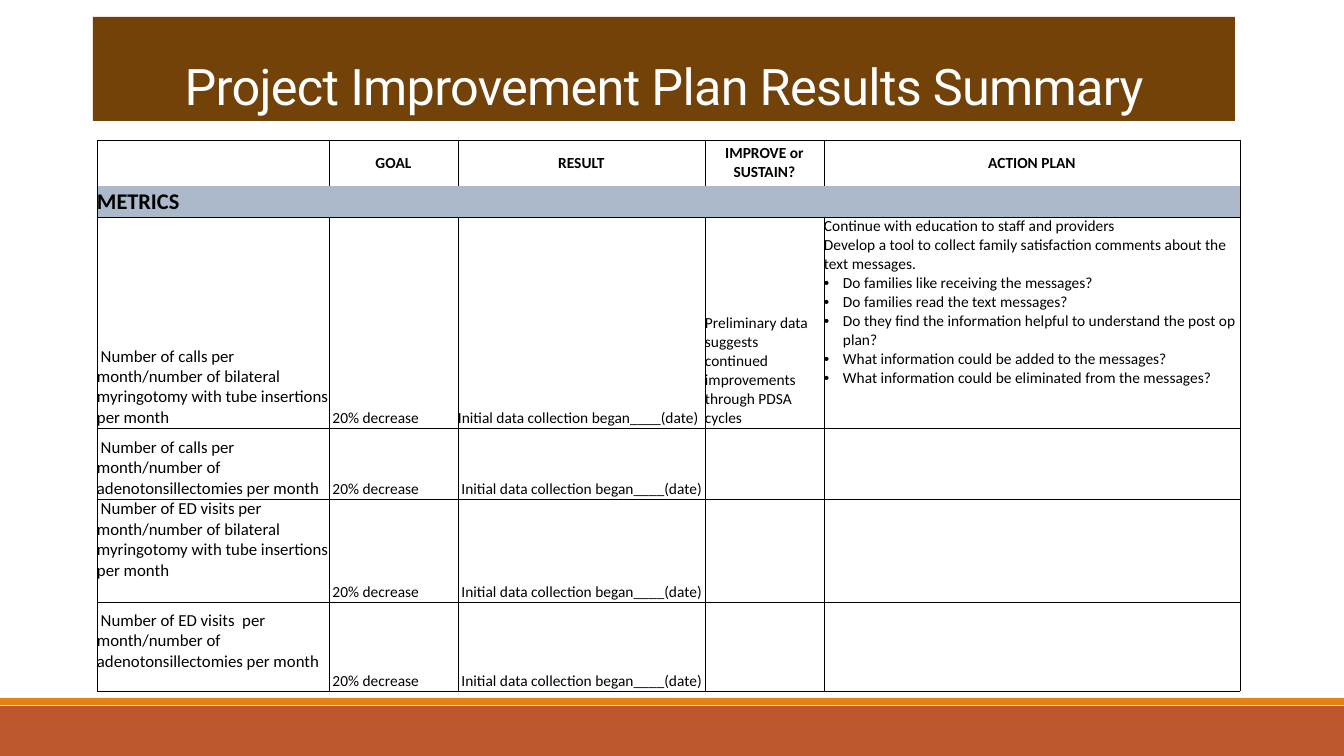
from dataclasses import dataclass
from itertools import product
from typing import Any

from lxml.etree import SubElement
from pptx import Presentation
from pptx.dml.color import RGBColor
from pptx.enum.shapes import MSO_SHAPE as Preset
from pptx.enum.text import MSO_ANCHOR as Anchor, MSO_AUTO_SIZE as AutoSize, PP_ALIGN as Align
from pptx.oxml.ns import qn
from pptx.util import Pt

EMU_PER_PX = 914400 / 100.8


@dataclass(frozen=True)
class Theme:
    ink: str = "000000"
    paper: str = "FFFFFF"
    banner: str = "724209"
    section: str = "ACB9CA"
    footer: str = "BD582C"
    accent: str = "E48312"
    title_font: str = "Roboto"
    body_font: str = "Calibri"
    title_size: int = 36
    section_size: int = 16
    metric_size: int = 12
    body_size: int = 11
    border_width: float = 0.5


@dataclass(frozen=True)
class Box:
    left: int
    top: int
    width: int
    height: int


@dataclass(frozen=True)
class Band:
    box: Box
    color: str


@dataclass(frozen=True)
class Entry:
    row: int
    column: int
    lines: tuple[str, ...]
    size: int
    anchor: Any = Anchor.BOTTOM
    align: Any = Align.LEFT
    bold: bool = False
    bottom: int = 0
    bullets_from: int = 99


@dataclass(frozen=True)
class Metric:
    name: str
    result: str = " Initial data collection began____(date)"
    anchor: Any = Anchor.BOTTOM
    bottom: int = 0


THEME = Theme()
SLIDE = Box(0, 0, 1344, 756)
TITLE = Box(93, 17, 1142, 104)
GRID = Box(97, 140, 1143, 551)
COLUMNS = (232, 129, 247, 119, 416)
ROWS = (46, 31, 211, 71, 103, 89)
SECTION_ROW = 1
BULLET_INDENT = 19
BANDS = (
    Band(Box(0, 706, 1344, 50), THEME.footer),
    Band(Box(0, 698, 1344, 7), THEME.accent),
)
HEADINGS = ("GOAL", "RESULT", "IMPROVE or SUSTAIN?", "ACTION PLAN")
GOAL = " 20% decrease"
METRICS = (
    Metric(
        " Number of calls per month/number of bilateral myringotomy with tube insertions per month",
        result="Initial data collection began____(date)",
    ),
    Metric(" Number of calls per month/number of adenotonsillectomies per month"),
    Metric(
        " Number of ED visits per month/number of bilateral myringotomy with tube insertions per month",
        anchor=Anchor.TOP,
    ),
    Metric(" Number of ED visits  per month/number of adenotonsillectomies per month", bottom=19),
)
PROGRESS = "Preliminary data suggests continued improvements through PDSA cycles"
ACTIONS = (
    "Continue with education to staff and providers",
    "Develop a tool to collect family satisfaction comments about the text messages.",
    "Do families like receiving the messages?",
    "Do families read the text messages?",
    "Do they find the information helpful to understand the post op plan?",
    "What information could be added to the messages?",
    "What information could be eliminated from the messages?",
)


def px(length: int) -> int:
    return round(length * EMU_PER_PX)


def frame(box: Box) -> tuple[int, int, int, int]:
    return px(box.left), px(box.top), px(box.width), px(box.height)


def apply(target: Any, formats: dict[str, Any]) -> None:
    for name, value in formats.items():
        setattr(target, name, value)


def paint(fill: Any, color: str) -> None:
    fill.solid()
    fill.fore_color.rgb = RGBColor.from_string(color)


def style_font(font: Any, family: str, size: int, color: str, bold: bool = False) -> None:
    apply(font, {"name": family, "size": Pt(size), "bold": bold})
    font.color.rgb = RGBColor.from_string(color)


def draw_band(slide: Any, band: Band) -> None:
    strip = slide.shapes.add_shape(Preset.RECTANGLE, *frame(band.box))
    strip.shadow.inherit = False
    paint(strip.fill, band.color)
    strip.line.fill.background()


def draw_title(slide: Any, wording: str) -> None:
    title = slide.shapes.title
    apply(title, dict(zip(("left", "top", "width", "height"), frame(TITLE))))
    paint(title.fill, THEME.banner)
    apply(title.text_frame, {
        "text": wording,
        "vertical_anchor": Anchor.BOTTOM,
        "word_wrap": True,
        "auto_size": AutoSize.NONE,
    })
    heading = title.text_frame.paragraphs[0]
    apply(heading, {"alignment": Align.CENTER, "line_spacing": 0.85})
    style_font(heading.runs[0].font, THEME.title_font, THEME.title_size, THEME.paper)
    heading.runs[0].font._element.set("spc", "-50")


def draw_borders(cell: Any, row: int) -> None:
    hidden = {0: "lnB", SECTION_ROW: "lnT"}.get(row)
    properties = cell._tc.get_or_add_tcPr()
    for edge in ("lnL", "lnR", "lnT", "lnB"):
        line = SubElement(properties, qn(f"a:{edge}"), w=str(Pt(THEME.border_width)))
        if edge == hidden:
            SubElement(line, qn("a:noFill"))
        else:
            ink = SubElement(line, qn("a:solidFill"))
            SubElement(ink, qn("a:srgbClr"), val=THEME.ink)


def add_bullet(paragraph: Any) -> None:
    properties = paragraph._p.get_or_add_pPr()
    indent = px(BULLET_INDENT)
    for name, value in {"marL": indent, "indent": -indent}.items():
        properties.set(name, str(value))
    SubElement(properties, qn("a:buFont"), typeface="Arial")
    SubElement(properties, qn("a:buChar"), char="•")


def write_entry(cell: Any, entry: Entry) -> None:
    apply(cell, {"text": "\n".join(entry.lines), "vertical_anchor": entry.anchor,
                 "margin_bottom": px(entry.bottom)})
    for index, paragraph in enumerate(cell.text_frame.paragraphs):
        paragraph.alignment = entry.align
        style_font(paragraph.runs[0].font, THEME.body_font, entry.size, THEME.ink, entry.bold)
        if index >= entry.bullets_from:
            add_bullet(paragraph)


def list_entries() -> list[Entry]:
    body = THEME.body_size
    entries = [Entry(0, column, (heading,), body, Anchor.MIDDLE, Align.CENTER, True)
               for column, heading in enumerate(HEADINGS, 1)]
    entries.append(Entry(SECTION_ROW, 0, ("METRICS",), THEME.section_size, Anchor.MIDDLE, bold=True))
    first = SECTION_ROW + 1
    for row, metric in enumerate(METRICS, first):
        entries += [
            Entry(row, 0, (metric.name,), THEME.metric_size, metric.anchor, bottom=metric.bottom),
            Entry(row, 1, (GOAL,), body),
            Entry(row, 2, (metric.result,), body),
        ]
    entries.append(Entry(first, 3, (PROGRESS,), body))
    entries.append(Entry(first, 4, ACTIONS, body, Anchor.TOP, bullets_from=2))
    return entries


def draw_results(slide: Any) -> None:
    results = slide.shapes.add_table(len(ROWS), len(COLUMNS), *frame(GRID)).table
    apply(results, {"first_row": False, "horz_banding": False})
    for column, width in zip(results.columns, COLUMNS):
        column.width = px(width)
    for row, height in zip(results.rows, ROWS):
        row.height = px(height)
    for row, column in product(range(len(ROWS)), range(len(COLUMNS))):
        cell = results.cell(row, column)
        apply(cell, dict.fromkeys(("margin_left", "margin_right", "margin_top", "margin_bottom"), 0))
        draw_borders(cell, row)
        paint(cell.fill, THEME.section if row == SECTION_ROW else THEME.paper)
    results.cell(SECTION_ROW, 0).merge(results.cell(SECTION_ROW, len(COLUMNS) - 1))
    for entry in list_entries():
        write_entry(results.cell(entry.row, entry.column), entry)


def main() -> None:
    deck = Presentation()
    apply(deck, {"slide_width": px(SLIDE.width), "slide_height": px(SLIDE.height)})
    slide = deck.slides.add_slide(deck.slide_layouts[5])
    for band in BANDS:
        draw_band(slide, band)
    draw_title(slide, "Project Improvement Plan Results Summary")
    draw_results(slide)
    deck.save("out.pptx")


if __name__ == "__main__":
    main()
